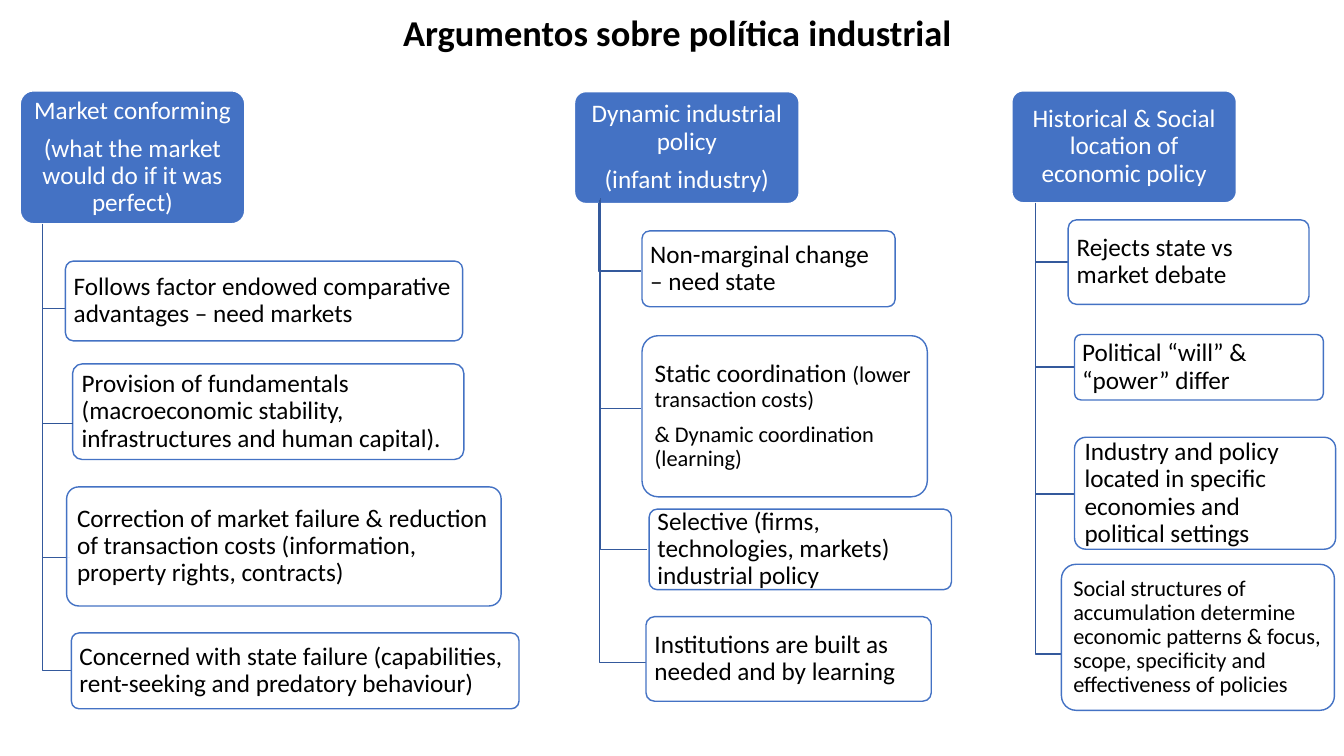
from lxml import etree
from pptx import Presentation
from pptx.dml.color import RGBColor
from pptx.enum.shapes import MSO_CONNECTOR, MSO_SHAPE
from pptx.enum.text import MSO_ANCHOR, MSO_AUTO_SIZE, PP_ALIGN
from pptx.oxml.ns import qn
from pptx.util import Cm, Pt

STRAIGHT = MSO_CONNECTOR.STRAIGHT
ROUNDED = MSO_SHAPE.ROUNDED_RECTANGLE
MIDDLE = MSO_ANCHOR.MIDDLE
NO_FIT = MSO_AUTO_SIZE.NONE
LEFT, CENTER = PP_ALIGN.LEFT, PP_ALIGN.CENTER

COLORS = {
    "header": "4472C4",
    "branch": "34599C",
    "tick": "2F5597",
    "white": "FFFFFF",
    "text": "000000",
}

COLUMNS = [
    {
        "header": (0.51, 2.29, 5.66, 3.35),
        "title": ["Market conforming", "(what the market would do if it was perfect)"],
        "items": [
            ((1.07, 5.64, 1.63, 7.77), (1.65, 6.58, 10.01, 2.01),
             ["Follows factor endowed comparative advantages – need markets"]),
            (None, (1.83, 9.17, 9.86, 2.41),
             ["Provision of fundamentals (macroeconomic stability, infrastructures and human capital)."]),
            ((1.07, 5.64, 1.77, 14.05), (1.68, 12.27, 10.95, 3),
             ["Correction of market failure & reduction of transaction costs (information, property rights, contracts)"]),
            ((1.07, 5.64, 1.8, 16.89), (1.8, 15.95, 11.28, 1.91),
             ["Concerned with state failure (capabilities, rent-seeking and predatory behaviour)"]),
        ],
    },
    {
        "header": (14.48, 2.31, 5.66, 2.82),
        "title": ["Dynamic industrial policy", "(infant industry)"],
        "items": [
            ((15.09, 5.11, 16.15, 6.83), (16.18, 5.82, 6.38, 1.91),
             ["Non-marginal change – need state"]),
            ((15.11, 5.03, 16.15, 10.29), (16.18, 8.46, 7.19, 4.06),
             [[("Static coordination ", 18), ("(lower transaction costs)", 16)],
              [("& Dynamic coordination (learning)", 16)]]),
            ((15.14, 5, 16.31, 13.84), (16.36, 12.83, 7.62, 2.03),
             ["Selective (firms, technologies, markets) industrial policy"]),
            ((15.11, 5.03, 16.28, 16.69), (16.28, 15.54, 7.19, 2.13),
             ["Institutions are built as needed and by learning"]),
        ],
    },
    {
        "header": (25.5, 2.29, 5.66, 2.82),
        "title": ["Historical & Social location of economic policy"],
        "items": [
            ((26.09, 5.11, 26.92, 6.6), (26.92, 5.54, 6.07, 2.13),
             ["Rejects state vs market debate"]),
            ((26.09, 5.11, 27.08, 9.25), (27.08, 8.43, 6.27, 1.65),
             ["Political “will” & “power” differ"]),
            ((26.09, 5.11, 27.08, 12.45), (27.08, 11.02, 6.58, 2.82),
             ["Industry and policy located in specific economies and political settings"]),
            ((26.09, 5.11, 26.75, 16.48), (26.75, 14.22, 6.88, 3.68),
             [[("Social structures of accumulation determine economic patterns & focus, "
                "scope, specificity and effectiveness of policies", 16)]]),
        ],
    },
]


def rgb(name):
    return RGBColor.from_string(COLORS[name])


class Deck:
    font = "Calibri"
    size = 18

    def __init__(self, prs):
        self.s = prs.slides.add_slide(prs.slide_layouts[5])

    def style(self, r, size, color, bold=False):
        r.font.name = self.font
        r.font.size = Pt(size)
        r.font.bold = bold
        r.font.color.rgb = rgb(color)

    def title(self, text):
        sp = self.s.shapes.title
        sp.left, sp.top, sp.width, sp.height = Cm(2.29), Cm(0.15), Cm(30.73), Cm(1.47)
        tf = sp.text_frame
        tf.text = text
        tf.auto_size = NO_FIT
        tf.word_wrap = True
        tf.vertical_anchor = MIDDLE
        tf.margin_left = Cm(7.87)
        p = tf.paragraphs[0]
        p.alignment = LEFT
        p.line_spacing = 0.9
        self.style(p.runs[0], 26, "text", True)

    def card(self, box, paragraphs, fill, line, color, align, opacity=None):
        sp = self.s.shapes.add_shape(ROUNDED, *map(Cm, box))
        sp.adjustments[0] = 0.1
        sp.shadow.inherit = False
        sp.fill.solid()
        sp.fill.fore_color.rgb = rgb(fill)
        if opacity:
            tint = sp.fill._xPr.find(".//" + qn("a:srgbClr"))
            etree.SubElement(tint, qn("a:alpha")).set("val", str(opacity * 1000))
        sp.line.color.rgb = rgb(line)
        sp.line.width = Pt(1)
        tf = sp.text_frame
        tf.word_wrap = True
        tf.vertical_anchor = MIDDLE
        inset = 0.1 + 0.025 * box[3]
        tf.margin_left = tf.margin_right = Cm(inset)
        tf.margin_top = tf.margin_bottom = Cm(inset - 0.03)
        for i, parts in enumerate(paragraphs):
            p = tf.add_paragraph() if i else tf.paragraphs[0]
            p.alignment = align
            p.line_spacing = 0.9
            p.space_after = Pt(8)
            if isinstance(parts, str):
                parts = [(parts, self.size)]
            for text, size in parts:
                r = p.add_run()
                r.text = text
                self.style(r, size, color)

    def header(self, box, paragraphs):
        self.card(box, paragraphs, "header", "white", "white", CENTER)

    def argument(self, box, paragraphs):
        self.card(box, paragraphs, "white", "header", "text", LEFT, 90)

    def branch(self, x1, y1, x2, y2):
        fb = self.s.shapes.build_freeform(Cm(x1), Cm(y1))
        fb.add_line_segments([(Cm(x1), Cm(y2)), (Cm(x2), Cm(y2))], close=False)
        sp = fb.convert_to_shape()
        sp.shadow.inherit = False
        sp.fill.background()
        sp.line.color.rgb = rgb("branch")
        sp.line.width = Pt(1)

    def tick(self, x1, x2, y):
        sp = self.s.shapes.add_connector(STRAIGHT, Cm(x1), Cm(y), Cm(x2), Cm(y))
        sp.line.color.rgb = rgb("tick")
        sp.line.width = Pt(1)
        etree.SubElement(sp._element.spPr, qn("a:effectLst"))


def main():
    prs = Presentation()
    prs.slide_width, prs.slide_height = Cm(33.87), Cm(19.05)
    deck = Deck(prs)
    deck.title("Argumentos sobre política industrial")
    for column in COLUMNS:
        deck.header(column["header"], column["title"])
        for elbow, box, paragraphs in column["items"]:
            if elbow:
                deck.branch(*elbow)
            deck.argument(box, paragraphs)
    deck.tick(1.09, 1.85, 10.67)
    prs.save("out.pptx")


if __name__ == "__main__":
    main()
